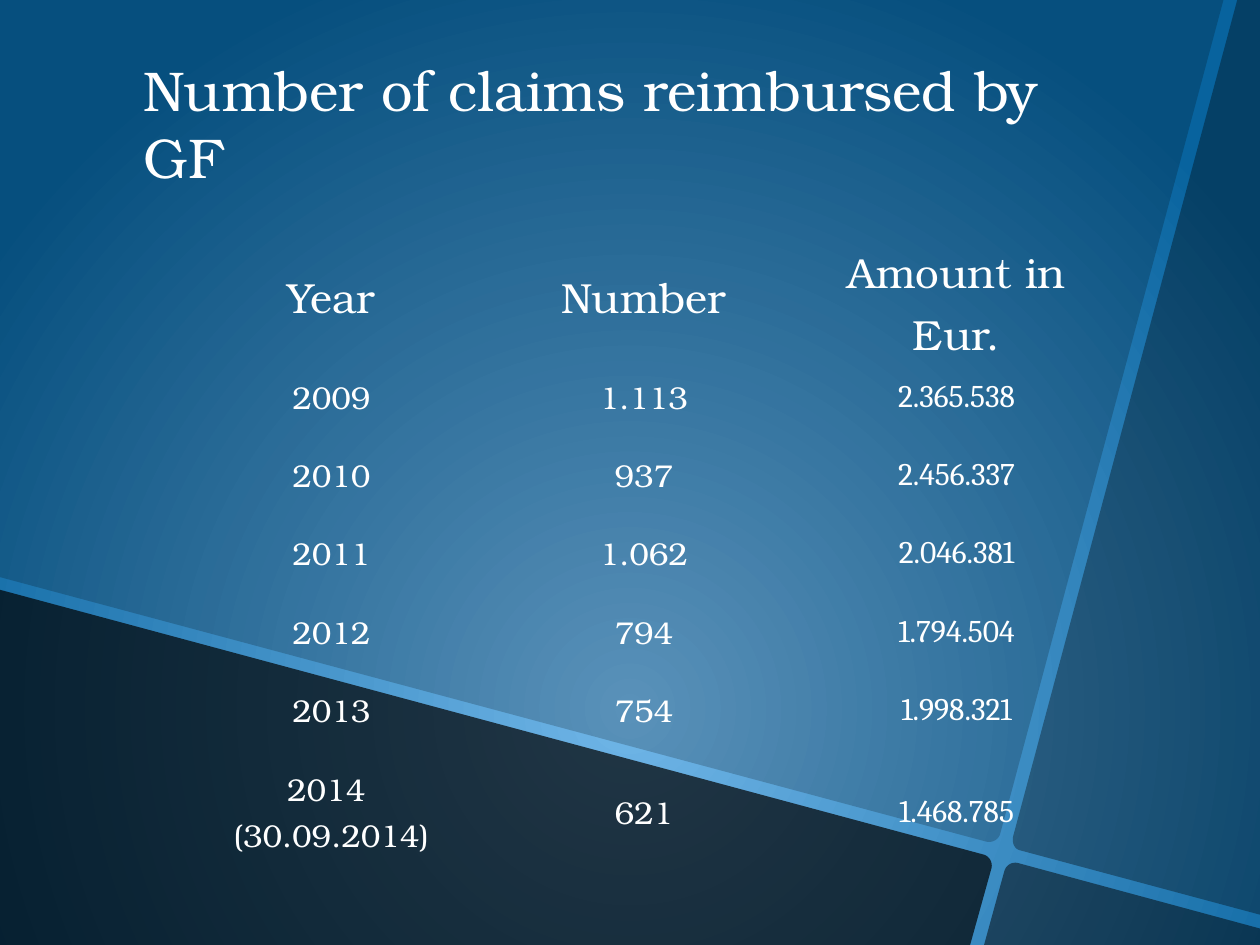
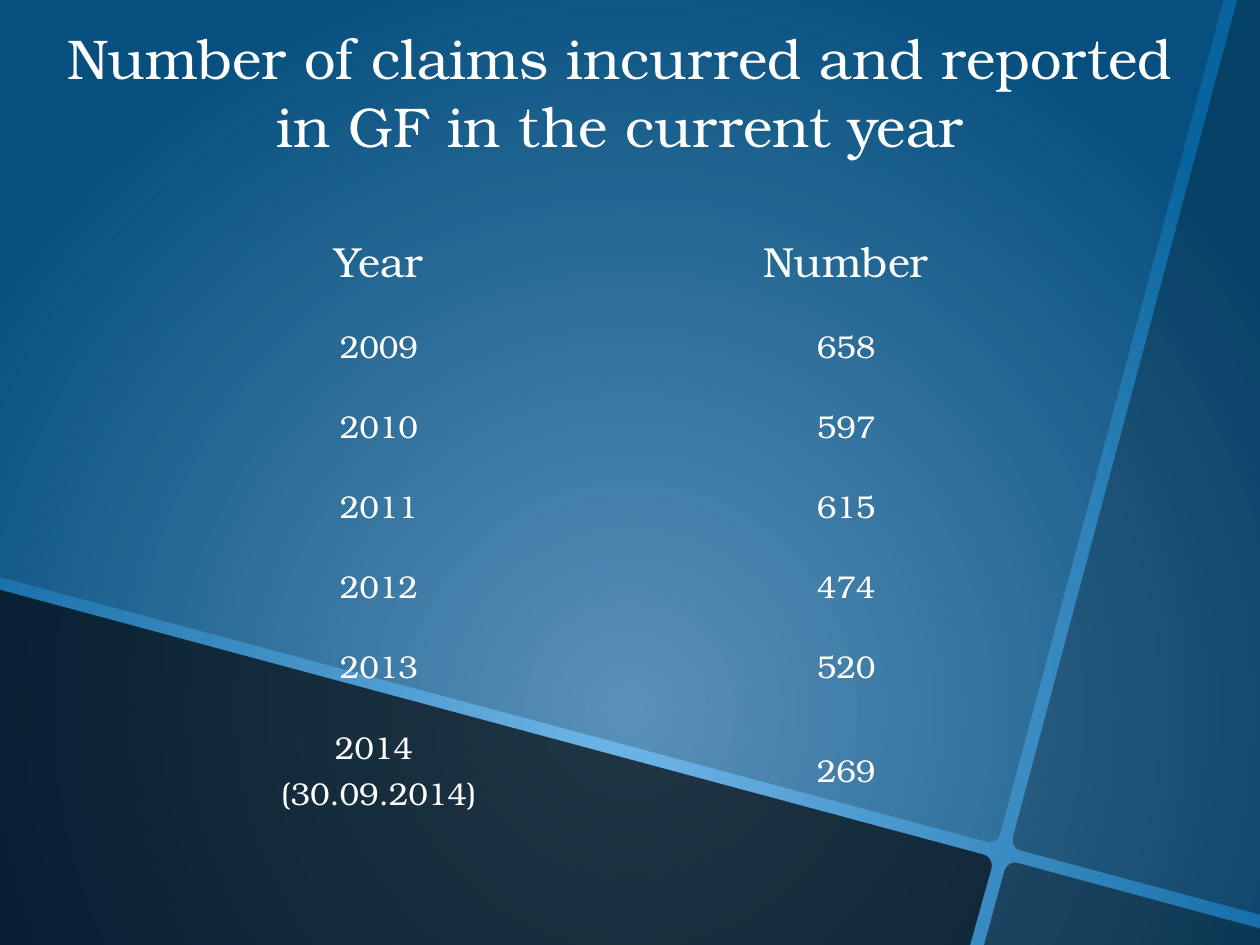
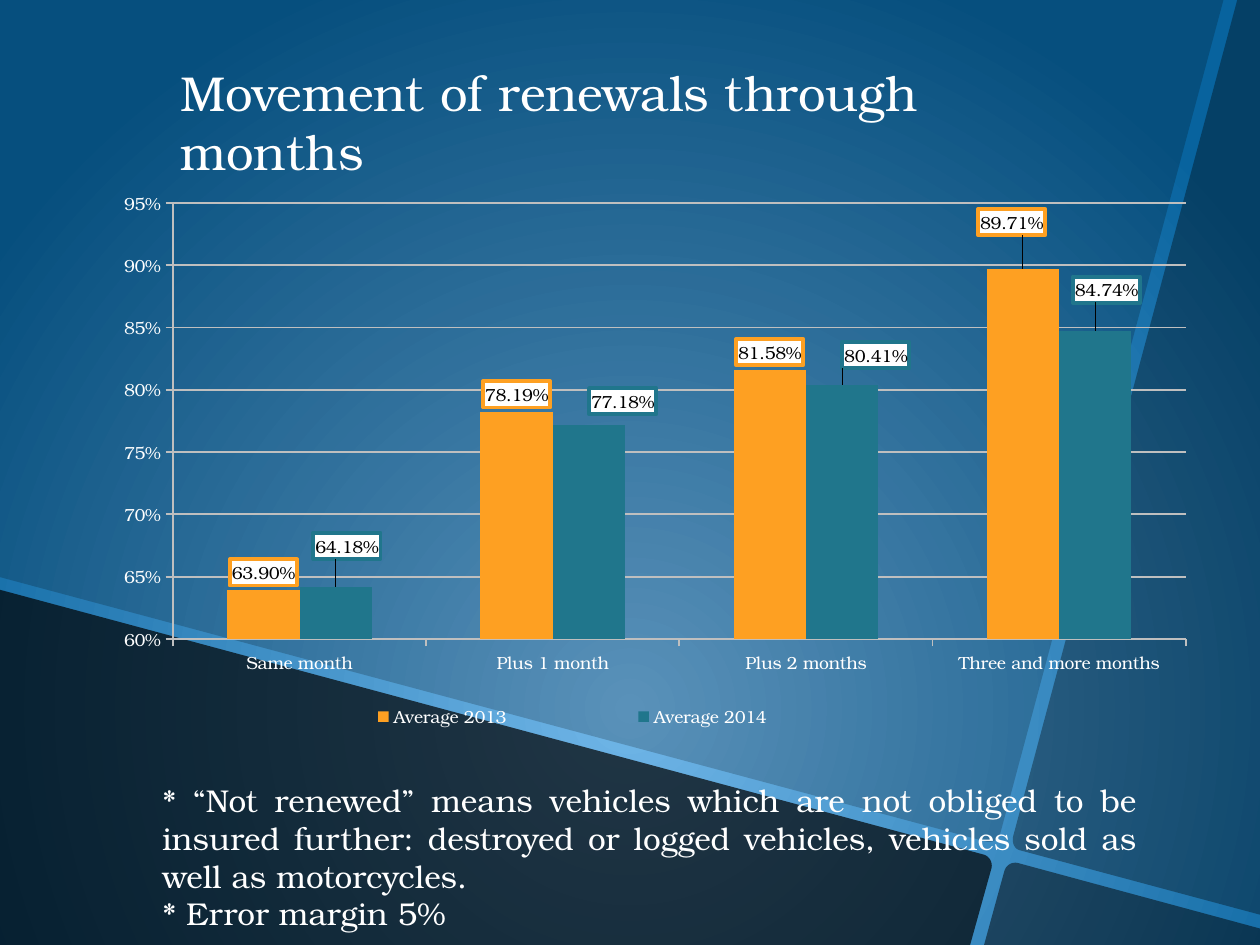
"""Build three slides on guarantee fund claims and policy renewals."""
from copy import deepcopy
from dataclasses import dataclass

from pptx import Presentation
from pptx.chart.data import CategoryChartData
from pptx.dml.color import RGBColor
from pptx.enum.chart import XL_CHART_TYPE as ChartType
from pptx.enum.chart import XL_LABEL_POSITION as LabelPosition
from pptx.enum.chart import XL_LEGEND_POSITION as LegendPosition
from pptx.enum.chart import XL_TICK_MARK as TickMark
from pptx.enum.text import MSO_ANCHOR as Anchor
from pptx.enum.text import MSO_AUTO_SIZE as AutoSize
from pptx.enum.text import PP_ALIGN as Align
from pptx.oxml import parse_xml
from pptx.oxml.ns import nsdecls
from pptx.util import Pt


@dataclass(frozen=True)
class Theme:
    font: str = "TeX Gyre Bonum"
    amount_font: str = "Cambria"
    text: str = "FFFFFF"
    shade: str = "000000"
    glow: str = "70B6E8"
    edge: str = "08639E"
    grid: str = "BFBFBF"
    series: tuple = ("FEA022", "20768C")
    title_size: int = 32
    small_title_size: int = 28
    header_size: int = 24
    body_size: int = 18
    chart_size: int = 10


theme = Theme()


def format_text(paragraph, size, name=theme.font, **paragraph_format):
    for attribute, value in paragraph_format.items():
        setattr(paragraph, attribute, value)
    for run in paragraph.runs:
        for attribute, value in {"size": Pt(size), "name": name}.items():
            setattr(run.font, attribute, value)
        run.font.color.rgb = RGBColor.from_string(theme.text)


def manual_layout(**values):
    items = "".join(f'<c:{tag} val="{value}"/>' for tag, value in values.items())
    return parse_xml(f'<c:layout {nsdecls("c")}><c:manualLayout>{items}</c:manualLayout></c:layout>')


presentation = Presentation()
presentation.slide_width, presentation.slide_height = Pt(720), Pt(540)
master = presentation.slide_master

background = master.background.fill
background.gradient()
for stop, color, position in zip(background.gradient_stops, (theme.glow, theme.edge), (0, 1)):
    stop.color.rgb = RGBColor.from_string(color)
    stop.position = position
linear = master.element.xpath("p:cSld/p:bg//a:lin")[0]
linear.getparent().replace(linear, parse_xml(
    f'<a:path {nsdecls("a")} path="circle"><a:fillToRect l="50000" t="50000" r="50000" b="0"/></a:path>'))

titles = [
    ("Number of claims reimbursed by GF", theme.title_size, Align.LEFT, (75, 28, 572, 46)),
    ("Number of claims incurred and reported in GF in the current year",
     theme.title_size, Align.CENTER, (19, 10, 671, 85)),
    ("Movement of renewals through months", theme.small_title_size, Align.LEFT, (96, 32, 514, 41)),
]
slides = []
for text, size, alignment, box in titles:
    slide = presentation.slides.add_slide(presentation.slide_layouts[5])
    slides.append(slide)
    title = slide.shapes.title
    for attribute, value in zip(("left", "top", "width", "height"), box):
        setattr(title, attribute, Pt(value))
    frame = title.text_frame
    frame.text = text
    frame_format = {"word_wrap": True, "auto_size": AutoSize.SHAPE_TO_FIT_TEXT, "vertical_anchor": Anchor.TOP}
    for attribute, value in frame_format.items():
        setattr(frame, attribute, value)
    format_text(frame.paragraphs[0], size, alignment=alignment)

panels = [
    (20, [(571.7, 475.9), (571, 479.5), (567.4, 481.7), (563.8, 481)],
     [(0, 329.8), (0, 0), (699.1, 0)]),
    (70, [(561.6, 488.2), (565.2, 488.9), (567.4, 492.5), (566.6, 496.1)],
     [(554.4, 540), (0, 540), (0, 337)]),
    (50, [(573.8, 498.2), (574.6, 494.6), (578, 492.2), (581.8, 493.2)],
     [(720, 530.6), (720, 540), (562.3, 540)]),
    (35, [(583.2, 486), (579.6, 485.3), (578.2, 481.7), (578.9, 478.1)],
     [(707, 0), (720, 0), (720, 522.7)]),
]
curve_steps = 8
for index, (opacity, corner, sides) in enumerate(panels):
    outline = []
    for step in range(curve_steps + 1):
        t = step / curve_steps
        weights = ((1 - t) ** 3, 3 * t * (1 - t) ** 2, 3 * t ** 2 * (1 - t), t ** 3)
        outline.append([sum(w * point[axis] for w, point in zip(weights, corner)) for axis in (0, 1)])
    points = [(Pt(x), Pt(y)) for x, y in outline + sides]
    builder = slides[0].shapes.build_freeform(*points[0])
    builder.add_line_segments(points[1:])
    panel = builder.convert_to_shape()
    panel.name = f"Panel {index + 1}"
    panel.shadow.inherit = False
    panel.line.fill.background()
    panel.fill.solid()
    panel.fill.fore_color.rgb = RGBColor.from_string(theme.shade)
    panel.element.xpath("p:spPr/a:solidFill/a:srgbClr")[0].append(
        parse_xml(f'<a:alpha {nsdecls("a")} val="{opacity * 1000}"/>'))
    panel.element.nvSpPr.cNvPr.id = 100 + index
    master.element.cSld.spTree.insert(2 + index, panel.element)

years = ["2009", "2010", "2011", "2012", "2013", "2014 \n(30.09.2014)"]
reimbursed = ["1.113", "937", "1.062", "794", "754", "621"]
amounts = ["2.365.538", "2.456.337", "2.046.381", "1.794.504", "1.998.321", "1.468.785"]
incurred = ["658", "597", "615", "474", "520", "269"]
tables = [
    (slides[0], (100, 132.5, 536, 346), (51, 44.8, 71.3),
     [("Year", "Number", "Amount in Eur."), *zip(years, reimbursed, amounts)]),
    (slides[1], (83, 121.5, 534, 354), (52, 45.8, 72.7),
     [("Year", "Number"), *zip(years, incurred)]),
]
for slide, box, (header_height, row_height, last_height), rows in tables:
    frame = slide.shapes.add_table(len(rows), len(rows[0]), *map(Pt, box))
    frame.element.xpath(".//a:tableStyleId")[0].text = "{2D5ABB26-0587-4C30-8999-92F81FD0307C}"
    table = frame.table
    table.first_row = table.horz_banding = False
    heights = [header_height] + [row_height] * (len(rows) - 2) + [last_height]
    for row_index, (values, height) in enumerate(zip(rows, heights)):
        table.rows[row_index].height = Pt(height)
        for column_index, value in enumerate(values):
            cell = table.cell(row_index, column_index)
            cell.text = value
            cell.fill.background()
            cell.vertical_anchor = Anchor.MIDDLE
            is_amount = row_index > 0 and column_index == 2
            if is_amount:
                for side, margin in {"left": 0.7, "top": 0.7, "right": 0.7, "bottom": 0}.items():
                    setattr(cell, f"margin_{side}", Pt(margin))
            for paragraph in cell.text_frame.paragraphs:
                format_text(paragraph, theme.body_size if row_index else theme.header_size,
                            theme.amount_font if is_amount else theme.font,
                            alignment=Align.CENTER, line_spacing=1.1)

footnote = slides[2].shapes.add_textbox(Pt(85.7), Pt(442.8), Pt(571), Pt(97)).text_frame
footnote.word_wrap = True
footnote.auto_size = AutoSize.SHAPE_TO_FIT_TEXT
footnote.text = (
    "* “Not renewed” means vehicles which are not obliged to be insured further: "
    "destroyed or logged vehicles, vehicles sold as well as motorcycles.\n* Error margin 5%")
for paragraph in footnote.paragraphs:
    format_text(paragraph, theme.body_size, alignment=Align.JUSTIFY)

renewals = CategoryChartData(number_format="0.00%")
renewals.categories = ["Same month", "Plus 1 month", "Plus 2 months", "Three and more months"]
renewals.add_series("Average 2013", (0.639, 0.7819, 0.8158, 0.8971))
renewals.add_series("Average 2014", (0.6418, 0.7718, 0.8041, 0.8474))
chart = slides[2].shapes.add_chart(
    ChartType.COLUMN_CLUSTERED, Pt(41), Pt(93), Pt(643), Pt(328), renewals).chart
chart.has_title = False
chart.font.size = Pt(theme.chart_size)
chart.font.name = theme.font
chart.font.color.rgb = RGBColor.from_string(theme.text)

value_axis, category_axis = chart.value_axis, chart.category_axis
axis_format = {"minimum_scale": 0.6, "maximum_scale": 0.95, "major_unit": 0.05, "has_major_gridlines": True}
for attribute, value in axis_format.items():
    setattr(value_axis, attribute, value)
value_axis.tick_labels.number_format = "0%"
value_axis.tick_labels.number_format_is_linked = False
for axis in (value_axis, category_axis):
    axis.major_tick_mark = TickMark.OUTSIDE
for lined in (value_axis, category_axis, value_axis.major_gridlines):
    lined.format.line.width = Pt(1)
    lined.format.line.color.rgb = RGBColor.from_string(theme.grid)

chart.has_legend = True
chart.legend.position = LegendPosition.RIGHT
chart.legend.include_in_layout = False
for layout in chart.element.xpath(".//c:plotArea/c:layout | .//c:legend/c:layout"):
    layout.getparent().remove(layout)
chart.element.xpath(".//c:plotArea")[0].insert(0, manual_layout(
    layoutTarget="inner", xMode="edge", yMode="edge", x=0.09, y=0.07, w=0.9, h=0.76))
chart.element.xpath(".//c:legendPos")[0].addnext(manual_layout(
    xMode="edge", yMode="edge", x=0.16, y=0.93, w=0.57, h=0.07))

plot = chart.plots[0]
for attribute, value in {"gap_width": 150, "overlap": 0, "vary_by_categories": False}.items():
    setattr(plot, attribute, value)
label_format = {"number_format": "0.00%", "number_format_is_linked": False,
                "show_value": True, "position": LabelPosition.OUTSIDE_END}
label_offsets = [
    {3: (-0.01, -0.05)},
    {0: (0.01, -0.04), 1: (0.03, -0.01), 2: (0.03, -0.02), 3: (0.01, -0.04)},
]
for index, (series, color, offsets) in enumerate(zip(plot.series, theme.series, label_offsets)):
    series.format.fill.solid()
    series.format.fill.fore_color.rgb = RGBColor.from_string(color)
    labels = series.data_labels
    for attribute, value in label_format.items():
        setattr(labels, attribute, value)
    labels.font.size = Pt(theme.chart_size)
    labels.font.name = theme.font
    labels.font.color.rgb = RGBColor.from_string(theme.shade)
    label_list = chart.element.xpath(".//c:ser/c:dLbls")[index]
    label_list.xpath("c:numFmt")[0].addnext(parse_xml(
        f'<c:spPr {nsdecls("c", "a")}><a:solidFill><a:srgbClr val="{theme.text}"/></a:solidFill>'
        f'<a:ln w="{Pt(2.25)}"><a:solidFill><a:srgbClr val="{color}"/></a:solidFill></a:ln></c:spPr>'))
    shared = label_list.xpath("*[not(self::c:showLeaderLines)]")
    for place, (point, (x, y)) in enumerate(offsets.items()):
        label = parse_xml(f'<c:dLbl {nsdecls("c")}><c:idx val="{point}"/></c:dLbl>')
        label.append(manual_layout(x=x, y=y))
        label.extend(deepcopy(shared))
        label_list.insert(place, label)

presentation.save("out.pptx")
